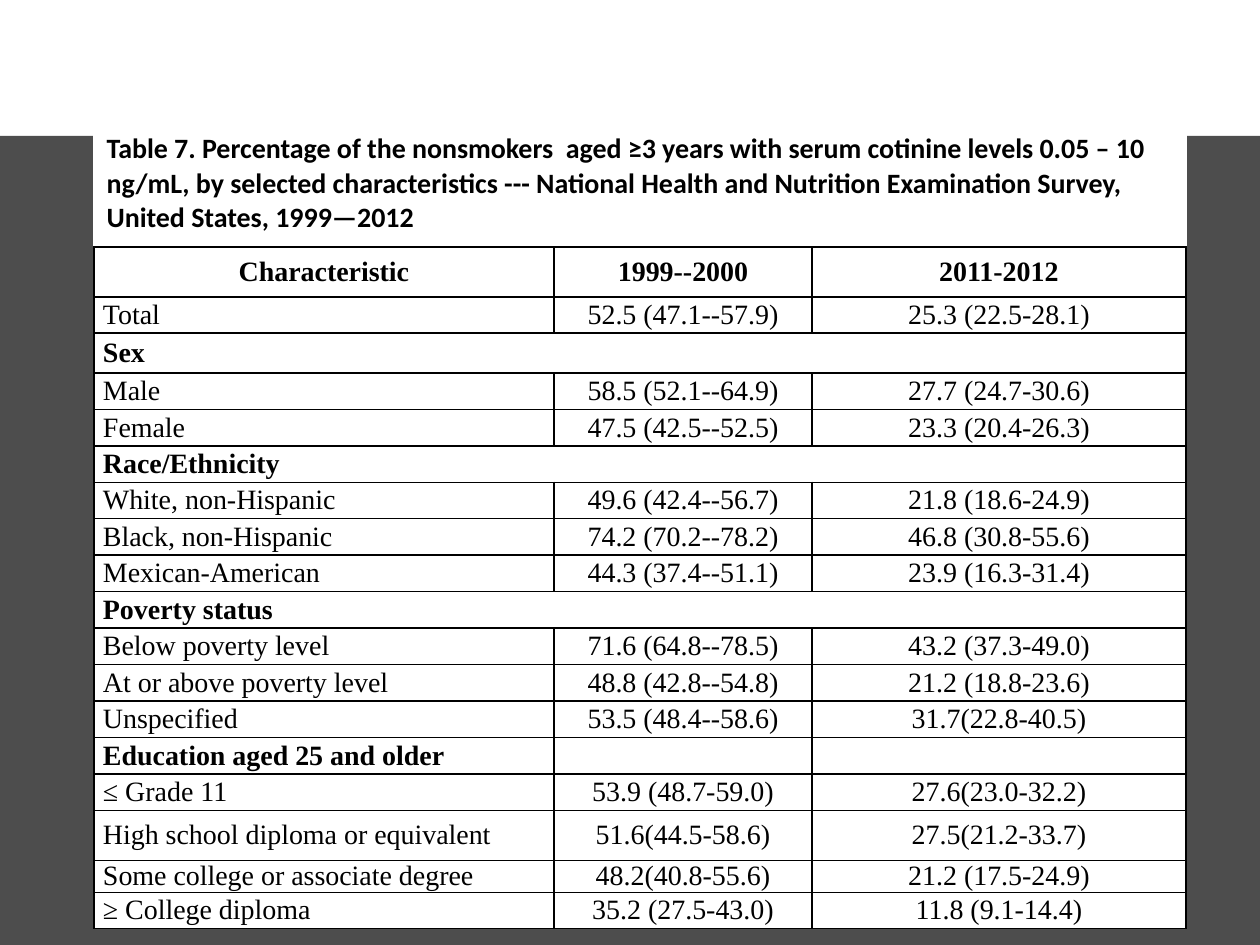
from lxml.etree import SubElement
from pptx import Presentation
from pptx.dml.color import RGBColor
from pptx.enum.shapes import MSO_SHAPE
from pptx.enum.text import MSO_ANCHOR, PP_ALIGN
from pptx.oxml.ns import qn
from pptx.util import Pt

PX = 914400 / 126
BLACK, WHITE, GRAY = "000000", "FFFFFF", "4D4D4D"
COLUMN_WIDTHS = [460, 258, 374]
ROW_HEIGHTS = [121, 50, 36, 40] + [36.5] * 12 + [50, 32, 36]
TITLE = ("Table 7. Percentage of the nonsmokers  aged ≥3 years with serum cotinine "
         "levels 0.05 – 10  ng/mL, by selected characteristics --- National Health and "
         "Nutrition Examination Survey, United States, 1999—2012")
ROWS = [
    (TITLE,),
    ("Characteristic", "1999--2000", "2011-2012"),
    ("Total", "52.5 (47.1--57.9)", "25.3 (22.5-28.1)"),
    ("Sex",),
    ("Male", "58.5 (52.1--64.9)", "27.7 (24.7-30.6)"),
    ("Female", "47.5 (42.5--52.5)", "23.3 (20.4-26.3)"),
    ("Race/Ethnicity",),
    ("White, non-Hispanic", "49.6 (42.4--56.7)", "21.8 (18.6-24.9)"),
    ("Black, non-Hispanic", "74.2 (70.2--78.2)", "46.8 (30.8-55.6)"),
    ("Mexican-American", "44.3 (37.4--51.1)", "23.9 (16.3-31.4)"),
    ("Poverty status",),
    ("Below poverty level", "71.6 (64.8--78.5)", "43.2 (37.3-49.0)"),
    ("At or above poverty level", "48.8 (42.8--54.8)", "21.2 (18.8-23.6)"),
    ("Unspecified", "53.5 (48.4--58.6)", "31.7(22.8-40.5)"),
    ("Education aged 25 and older", "", ""),
    ("≤ Grade 11", "53.9 (48.7-59.0)", "27.6(23.0-32.2)"),
    ("High school diploma or equivalent", "51.6(44.5-58.6)", "27.5(21.2-33.7)"),
    ("Some college or associate degree", "48.2(40.8-55.6)", "21.2 (17.5-24.9)"),
    ("≥ College diploma", "35.2 (27.5-43.0)", "11.8 (9.1-14.4)"),
]


def px(length):
    return round(length * PX)


def set_borders(cell, is_title):
    for side in "LRTB":
        line = SubElement(cell._tc.get_or_add_tcPr(), qn(f"a:ln{side}"), w=str(Pt(1)))
        fill = SubElement(line, qn("a:solidFill"))
        color = WHITE if is_title and side != "B" else BLACK
        SubElement(fill, qn("a:srgbClr"), val=color)


deck = Presentation()
deck.slide_width, deck.slide_height = px(1260), px(945)
page = deck.slides.add_slide(deck.slide_layouts[6])

backdrop = page.shapes.add_shape(MSO_SHAPE.RECTANGLE, 0, px(136), px(1260), px(809))
backdrop.shadow.inherit = False
backdrop.fill.solid()
backdrop.fill.fore_color.rgb = RGBColor.from_string(GRAY)
backdrop.line.fill.background()

frame = page.shapes.add_table(len(ROWS), len(COLUMN_WIDTHS), px(94), px(126),
                              px(sum(COLUMN_WIDTHS)), px(sum(ROW_HEIGHTS)))
table = frame.table
table.first_row = table.horz_banding = False
for column, width in zip(table.columns, COLUMN_WIDTHS):
    column.width = px(width)

for r, (values, height) in enumerate(zip(ROWS, ROW_HEIGHTS)):
    table.rows[r].height = px(height)
    is_title, is_header = r == 0, r == 1
    is_group = len(values) == 1 or not values[1]
    if len(values) == 1:
        table.cell(r, 0).merge(table.cell(r, 2))
    for c in range(len(COLUMN_WIDTHS)):
        cell = table.cell(r, c)
        set_borders(cell, is_title)
        cell.fill.solid()
        cell.fill.fore_color.rgb = RGBColor.from_string(WHITE)
        if not is_title:
            cell.vertical_anchor = MSO_ANCHOR.MIDDLE
            cell.margin_left = cell.margin_right = px(9)
            cell.margin_top = cell.margin_bottom = 0
        para = cell.text_frame.paragraphs[0]
        if c >= len(values) or not values[c]:
            SubElement(para._p, qn("a:endParaRPr"), sz="1600")
            continue
        para.alignment = PP_ALIGN.CENTER if c or is_header else PP_ALIGN.LEFT
        span = para.add_run()
        span.text = values[c]
        span.font.size = Pt(16)
        span.font.name = "Calibri" if is_title else "Times New Roman"
        span.font.bold = is_header or is_group
        span.font.color.rgb = RGBColor.from_string(BLACK)

deck.save("out.pptx")
